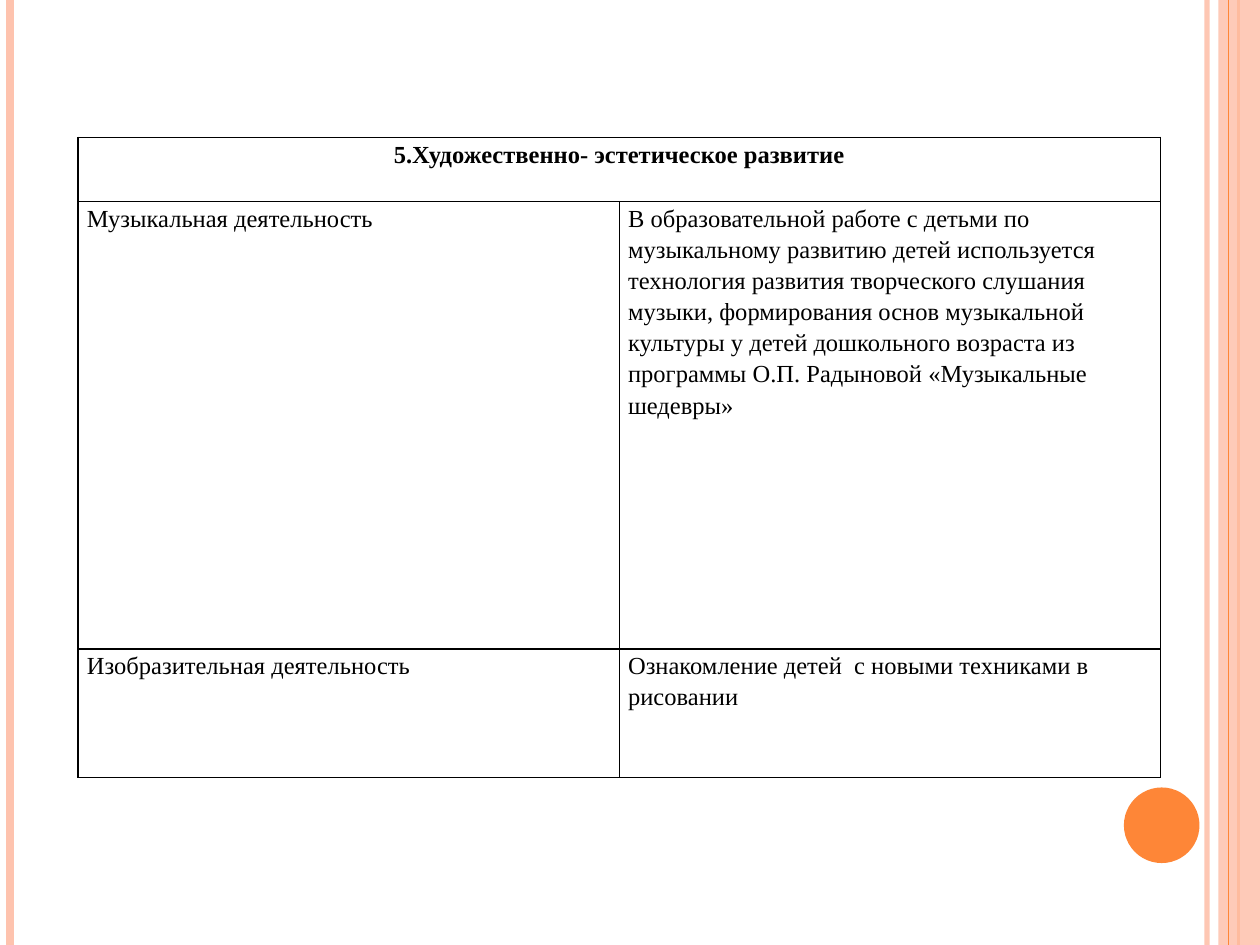
from lxml import etree
from pptx import Presentation
from pptx import util as u
from pptx.dml.color import RGBColor
from pptx.enum import shapes, text
from pptx.oxml import parse_xml
from pptx.oxml.ns import nsdecls, qn

WIDTH, HEIGHT = u.Inches(10), u.Inches(7.5)
BLACK = RGBColor(0x00, 0x00, 0x00)
ORANGE = RGBColor(0xFE, 0x86, 0x37)
PEACH = RGBColor(0xFE, 0xC3, 0xAE)
BLANK_LAYOUT = 6

HEADING = "5.Художественно- эстетическое развитие"
ACTIVITIES = [
    ("Музыкальная деятельность",
     "В образовательной работе с детьми по музыкальному развитию детей "
     "используется технология развития творческого слушания музыки, "
     "формирования основ музыкальной культуры у детей дошкольного возраста "
     "из программы О.П. Радыновой «Музыкальные шедевры»"),
    ("Изобразительная деятельность",
     "Ознакомление детей  с новыми техниками в рисовании"),
]


def write(frame, words, size=14, font="Times New Roman", color=BLACK,
          bold=False, align=text.PP_ALIGN.LEFT, spacing=1.15):
    paragraph = frame.paragraphs[0]
    paragraph.alignment = align
    paragraph.line_spacing = spacing
    run = paragraph.add_run()
    run.text = words
    run.font.size = u.Pt(size)
    run.font.name = font
    run.font.bold = bold
    run.font.color.rgb = color


def set_opacity(element, percent):
    color = next(element.iter(qn("a:srgbClr")))
    etree.SubElement(color, qn("a:alpha")).set("val", str(percent * 1000))


def add_borders(cell, color=BLACK, points=1):
    properties = cell._tc.get_or_add_tcPr()
    for index, side in enumerate(("lnL", "lnR", "lnT", "lnB")):
        properties.insert(index, parse_xml(
            f'<a:{side} {nsdecls("a")} w="{u.Pt(points)}">'
            f'<a:solidFill><a:srgbClr val="{color}"/></a:solidFill></a:{side}>'))


class SlideBuilder:
    """Places elements by shares of the slide's width and height."""

    def __init__(self, slide):
        self.slide = slide

    def place(self, left, top, width, height):
        return [round(share * side) for share, side in
                zip((left, top, width, height), (WIDTH, HEIGHT) * 2)]

    def stripe(self, x, points, color, opacity=100):
        """Draws a vertical line over the full height of the slide."""
        x = round(x * WIDTH)
        line = self.slide.shapes.add_connector(
            shapes.MSO_CONNECTOR.STRAIGHT, x, 0, x, HEIGHT)
        line.line.width = u.Pt(points)
        line.line.color.rgb = color
        properties = line._element.spPr
        etree.SubElement(properties, qn("a:effectLst"))
        if opacity < 100:
            set_opacity(properties, opacity)

    def shape(self, kind, box, color, opacity=100):
        shape = self.slide.shapes.add_shape(kind, *self.place(*box))
        shape.shadow.inherit = False
        shape.fill.solid()
        shape.fill.fore_color.rgb = color
        shape.line.fill.background()
        if opacity < 100:
            set_opacity(shape._element.spPr, opacity)

    def table(self, box, heading, rows, row_heights):
        columns = len(rows[0])
        table = self.slide.shapes.add_table(
            len(rows) + 1, columns, *self.place(*box)).table
        table.first_row = table.horz_banding = False
        for row, inches in zip(table.rows, row_heights):
            row.height = u.Inches(inches)
        for cell in table.iter_cells():
            cell.margin_left = cell.margin_right = u.Inches(0.07)
            cell.margin_top = cell.margin_bottom = 0
            cell.fill.background()
            add_borders(cell)
        table.cell(0, 0).merge(table.cell(0, columns - 1))
        write(table.cell(0, 0).text_frame, heading, bold=True,
              align=text.PP_ALIGN.CENTER)
        for row_index, row in enumerate(rows, start=1):
            for column_index, words in enumerate(row):
                write(table.cell(row_index, column_index).text_frame, words)


def main():
    presentation = Presentation()
    presentation.slide_width, presentation.slide_height = WIDTH, HEIGHT
    layout = presentation.slide_layouts[BLANK_LAYOUT]
    builder = SlideBuilder(presentation.slides.add_slide(layout))

    builder.stripe(0.958, 3, PEACH, opacity=93)
    builder.stripe(0.008, 4.5, PEACH)
    builder.stripe(0.983, 1.5, ORANGE)
    builder.shape(shapes.MSO_SHAPE.RECTANGLE, (0.967, 0, 0.033, 1), PEACH,
                  opacity=87)
    builder.stripe(0.975, 0.75, ORANGE)
    builder.shape(shapes.MSO_SHAPE.OVAL, (0.892, 6.25 / 7.5, 0.06, 0.08), ORANGE)
    builder.table((0.062, 1.09 / 7.5, 0.859, 5.08 / 7.5), HEADING, ACTIVITIES,
                  row_heights=(0.51, 3.55, 1.02))

    presentation.save("out.pptx")


if __name__ == "__main__":
    main()
